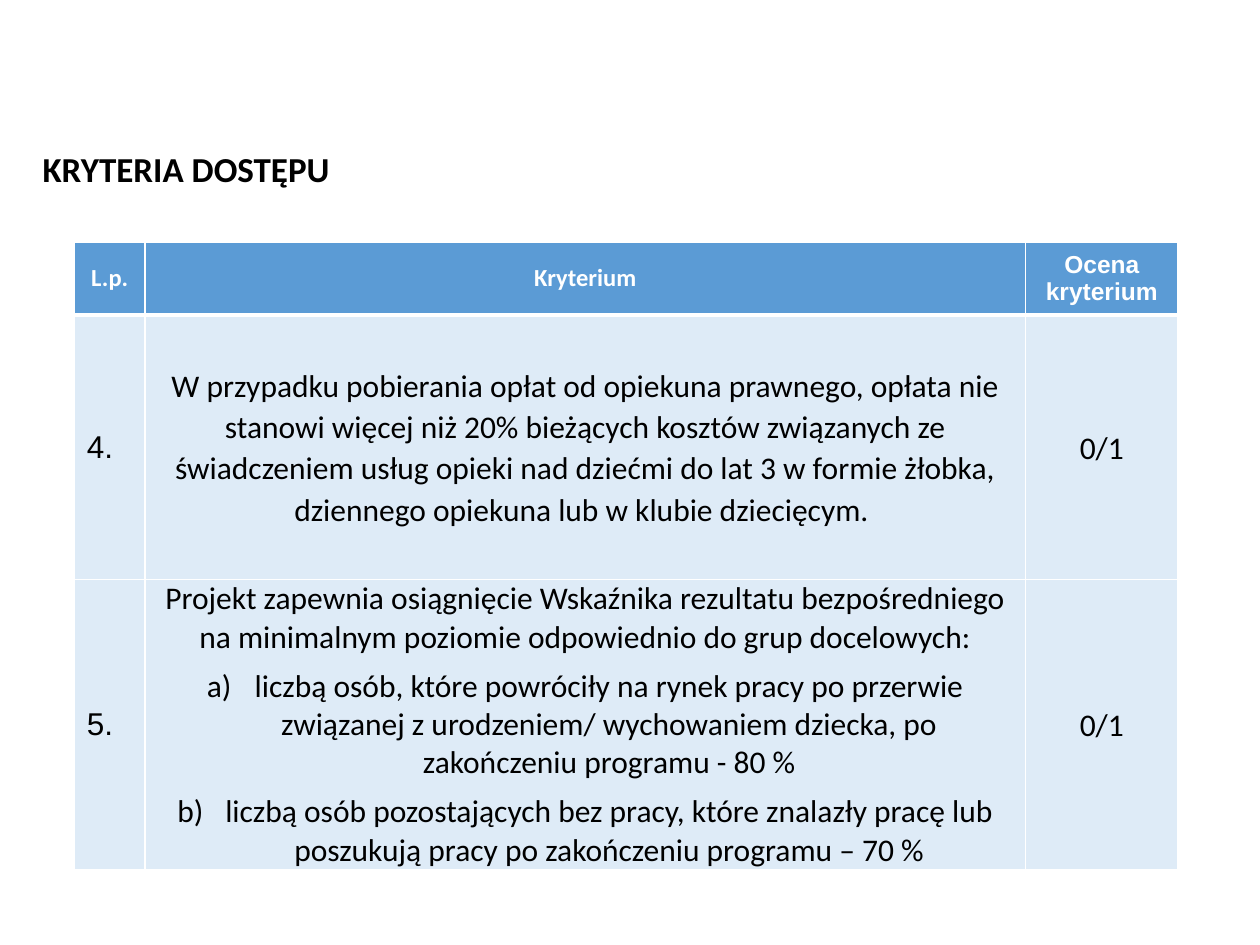
from pptx import Presentation
from pptx.dml.color import RGBColor
from pptx.enum import text as t
from pptx.oxml import parse_xml
from pptx.oxml.ns import nsdecls
from pptx.util import Inches, Pt

WHITE = RGBColor(0xFF, 0xFF, 0xFF)
BLACK = RGBColor(0, 0, 0)
BLUE = RGBColor(0x5B, 0x9B, 0xD5)
PALE = RGBColor(0xDE, 0xEB, 0xF7)
MID = t.MSO_ANCHOR.MIDDLE
CENTER = t.PP_ALIGN.CENTER

COLS = [0.56, 6.99, 1.21]
ROWS = [0.58, 2.1, 2.09]
HEAD = [("L.p.", "Calibri"), ("Kryterium", "Calibri"), ("Ocena kryterium", "Arial")]
FEE = (
    "W przypadku pobierania opłat od opiekuna prawnego, opłata nie stanowi więcej "
    "niż 20% bieżących kosztów związanych ze świadczeniem usług opieki nad dziećmi "
    "do lat 3 w formie żłobka, dziennego opiekuna lub w klubie dziecięcym. "
)
GOAL = (
    "Projekt zapewnia osiągnięcie Wskaźnika rezultatu bezpośredniego na minimalnym "
    "poziomie odpowiednio do grup docelowych:"
)
GROUPS = [
    "liczbą osób, które powróciły na rynek pracy po przerwie związanej z urodzeniem/ "
    "wychowaniem dziecka, po zakończeniu programu - 80 %",
    "liczbą osób pozostających bez pracy, które znalazły pracę lub poszukują pracy "
    "po zakończeniu programu – 70 %",
]


def add_run(para, words, size=18, face="Calibri", color=BLACK, bold=False):
    run = para.add_run()
    run.text = words
    font = run.font
    font.size, font.name, font.bold = Pt(size), face, bold
    font.color.rgb = color


def add_title(slide, left, top, width, height):
    frame = slide.shapes.add_textbox(left, top, width, height).text_frame
    frame.word_wrap = True
    frame.vertical_anchor = MID
    add_run(frame.paragraphs[0], "KRYTERIA DOSTĘPU", 20, bold=True)


def style_cell(cell, fill, base=1, top=1):
    """Set white borders, whose widths are in points, then the fill."""
    props = cell._tc.get_or_add_tcPr()
    for side, width in zip("LRTB", (1, 1, top, base)):
        props.append(parse_xml(
            f'<a:ln{side} {nsdecls("a")} w="{Pt(width)}"><a:solidFill>'
            f'<a:srgbClr val="{WHITE}"/></a:solidFill></a:ln{side}>'))
    cell.fill.solid()
    cell.fill.fore_color.rgb = fill
    cell.vertical_anchor = MID


def set_inset(cell, side, edge):
    cell.margin_left = cell.margin_right = Inches(side)
    cell.margin_top = cell.margin_bottom = Inches(edge)


def fill_plain(cell, words):
    set_inset(cell, 0.04, 0.04)
    para = cell.text_frame.paragraphs[0]
    para.alignment = CENTER
    para.line_spacing = 1.07
    add_run(para, words)


def fill_list(cell, intro, items):
    """Write an intro followed by items lettered a), b)."""
    set_inset(cell, 0.1, 0)
    frame = cell.text_frame
    for i, words in enumerate([intro] + items):
        para = frame.add_paragraph() if i else frame.paragraphs[0]
        para.alignment = CENTER
        para.space_after = Pt(6)
        if i:
            props = para._p.get_or_add_pPr()
            props.set("marL", str(Inches(0.38)))
            props.set("indent", str(Inches(-0.38)))
            props.append(parse_xml(
                f'<a:buAutoNum {nsdecls("a")} type="alphaLcParenR"/>'))
        add_run(para, words)


def add_criteria(slide, left, top, width, height):
    table = slide.shapes.add_table(
        len(ROWS), len(COLS), left, top, width, height).table
    for col, size in zip(table.columns, COLS):
        col.width = Inches(size)
    for row, size in zip(table.rows, ROWS):
        row.height = Inches(size)

    for c, (words, face) in enumerate(HEAD):
        cell = table.cell(0, c)
        style_cell(cell, BLUE, base=3)
        para = cell.text_frame.paragraphs[0]
        para.alignment = CENTER
        add_run(para, words, 14, face, WHITE, True)

    for r, num in enumerate(("4.", "5."), 1):
        for c in range(len(COLS)):
            style_cell(table.cell(r, c), PALE, top=3 if r == 1 else 1)
        add_run(table.cell(r, 0).text_frame.paragraphs[0], num, face="Arial")
        fill_plain(table.cell(r, 2), "0/1")
    fill_plain(table.cell(1, 1), FEE)
    fill_list(table.cell(2, 1), GOAL, GROUPS)


def main():
    deck = Presentation()
    deck.slide_width, deck.slide_height = Inches(10), Inches(7.5)
    slide = deck.slides.add_slide(deck.slide_layouts[6])
    add_criteria(slide, Inches(0.59), Inches(1.92), Inches(sum(COLS)), Inches(sum(ROWS)))
    add_title(slide, Inches(0.24), Inches(1.12), Inches(3.7), Inches(0.44))
    deck.save("out.pptx")


if __name__ == "__main__":
    main()
